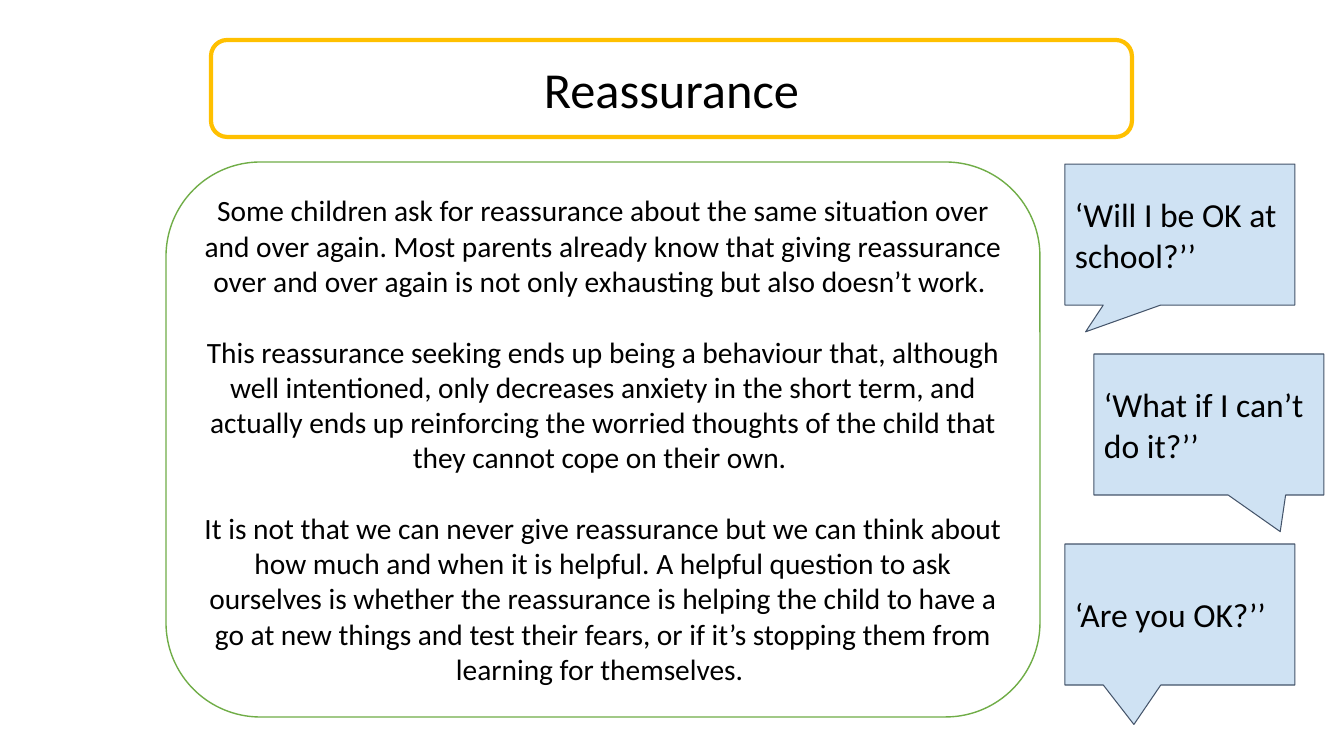
from pptx import Presentation
from pptx import util as u
from pptx.dml.color import RGBColor
from pptx.enum import shapes, text

EMU_PER_PX = 914400 / 100.8
FONT = "Calibri"
BLACK = RGBColor(0x00, 0x00, 0x00)
WHITE = RGBColor(0xFF, 0xFF, 0xFF)
GOLD = RGBColor(0xFF, 0xC0, 0x00)
GREEN = RGBColor(0x70, 0xAD, 0x47)
PALE_BLUE = RGBColor(0xCF, 0xE2, 0xF3)
SLATE = RGBColor(0x44, 0x54, 0x6A)

ADVICE = [
    "Some children ask for reassurance about the same situation over and over again. "
    "Most parents already know that giving reassurance over and over again is not only "
    "exhausting but also doesn’t work. ",
    "This reassurance seeking ends up being a behaviour that, although well intentioned, "
    "only decreases anxiety in the short term, and actually ends up reinforcing the "
    "worried thoughts of the child that they cannot cope on their own. ",
    "It is not that we can never give reassurance but we can think about how much and "
    "when it is helpful. A helpful question to ask ourselves is whether the reassurance "
    "is helping the child to have a go at new things and test their fears, or if it’s "
    "stopping them from learning for themselves. ",
]

# Worry, shift to the right in px, and pointer tip relative to the callout's centre
WORRIES = [
    ("‘Will I be OK at school?’’", 0, (-0.41, 0.69)),
    ("‘What if I can’t do it?’’", 29, (0.31, 0.76)),
    ("‘Are you OK?’’", 0, (-0.2, 0.78)),
]


def px(length):
    return u.Emu(round(length * EMU_PER_PX))


def add_box(slide, kind, box, fill, line, line_width):
    shape = slide.shapes.add_shape(kind, *map(px, box))
    shape.shadow.inherit = False
    shape.fill.solid()
    shape.fill.fore_color.rgb = fill
    shape.line.color.rgb = line
    shape.line.width = u.Pt(line_width)
    return shape


def write_text(shape, paragraphs, size, alignment, margins, gap=0):
    frame = shape.text_frame
    frame.word_wrap = True
    frame.auto_size = text.MSO_AUTO_SIZE.NONE
    frame.vertical_anchor = text.MSO_ANCHOR.MIDDLE
    frame.margin_left = frame.margin_right = px(margins[0])
    frame.margin_top = frame.margin_bottom = px(margins[1])
    frame.text = "\n".join(paragraphs)
    for index, paragraph in enumerate(frame.paragraphs):
        paragraph.alignment = alignment
        paragraph.space_before = u.Pt(gap if index else 0)
        font = paragraph.runs[0].font
        font.name = FONT
        font.size = u.Pt(size)
        font.color.rgb = BLACK


def place_title(slide, box):
    title = slide.shapes.title
    frame = add_box(slide, shapes.MSO_SHAPE.ROUNDED_RECTANGLE, box, WHITE, GOLD, 3)
    # The frame lies behind the title text
    title.element.addprevious(frame.element)
    title.left, title.top, title.width, title.height = map(px, box)
    write_text(title, ["Reassurance"], 36, text.PP_ALIGN.CENTER, (10, 5))


def add_advice(slide, box):
    panel = add_box(slide, shapes.MSO_SHAPE.ROUNDED_RECTANGLE, box, WHITE, GREEN, 1)
    panel.adjustments[0] = 0.17
    write_text(panel, ADVICE, 21, text.PP_ALIGN.CENTER, (6, 5), gap=25.2)


def add_worries(slide, box):
    left, top, width, height = box
    step = 190
    for row, (worry, shift, tip) in enumerate(WORRIES):
        callout = add_box(slide, shapes.MSO_SHAPE.ROUNDED_RECTANGULAR_CALLOUT,
                          (left + shift, top + row * step, width, height),
                          PALE_BLUE, SLATE, 0.75)
        for index, value in enumerate((*tip, 0)):
            callout.adjustments[index] = value
        write_text(callout, [worry], 24, text.PP_ALIGN.LEFT, (10, 10))


def main():
    presentation = Presentation()
    presentation.slide_width = px(1344)
    presentation.slide_height = px(756)
    slide = presentation.slides.add_slide(presentation.slide_layouts[5])
    place_title(slide, (211, 40, 921, 97))
    add_advice(slide, (166, 162, 874, 555))
    add_worries(slide, (1065, 164, 230, 141))
    presentation.save("out.pptx")


if __name__ == "__main__":
    main()
